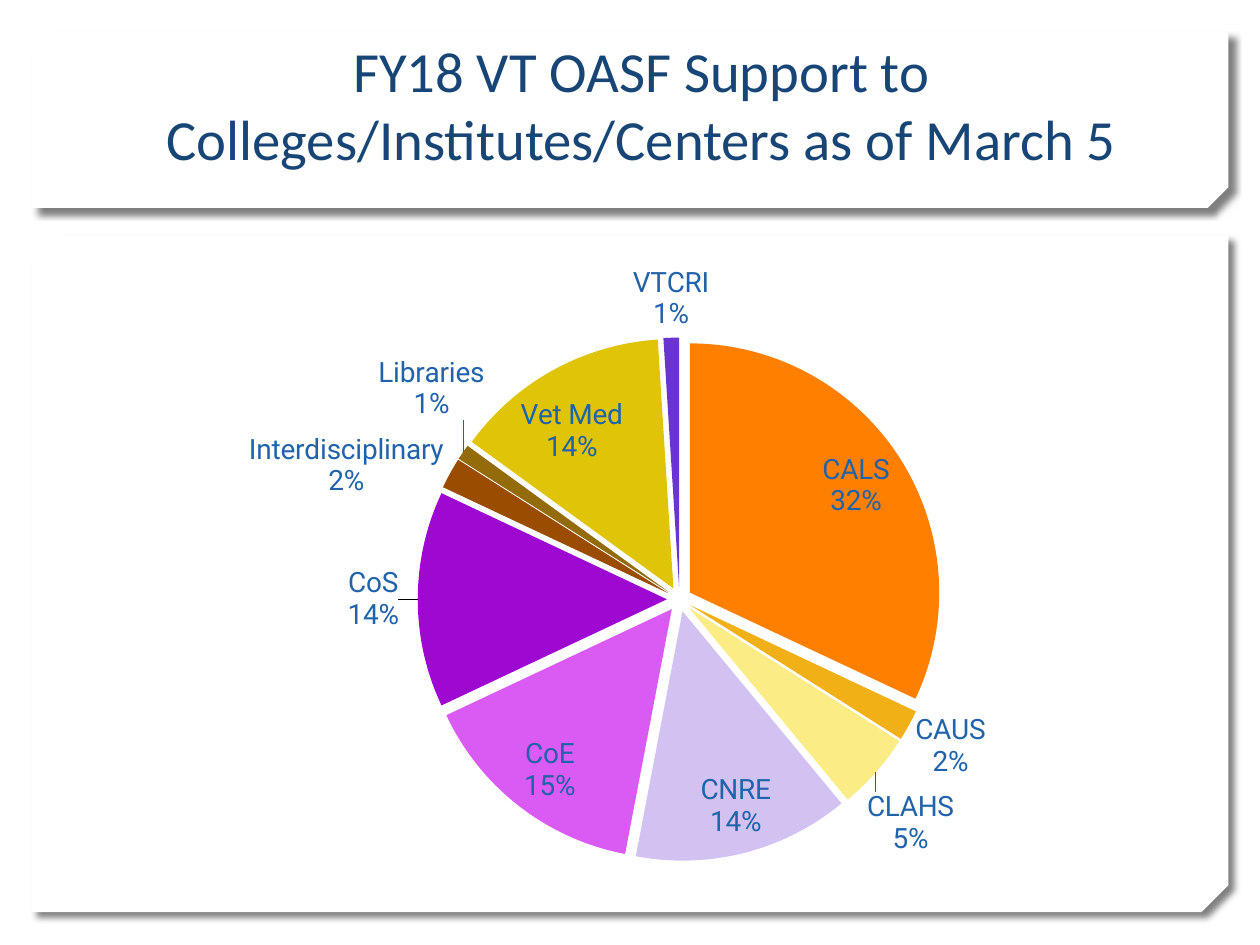
from dataclasses import dataclass

from lxml.etree import SubElement
from pptx import Presentation
from pptx.chart.data import CategoryChartData
from pptx.chart.series import PieSeries
from pptx.dml.color import RGBColor
from pptx.enum.chart import XL_CHART_TYPE as ChartType, XL_LABEL_POSITION as LabelPosition
from pptx.enum.shapes import MSO_SHAPE as Preset
from pptx.enum.text import MSO_ANCHOR as Anchor, PP_ALIGN as Align
from pptx.oxml import parse_xml
from pptx.oxml.ns import nsdecls, qn
from pptx.slide import Slide
from pptx.util import Inches, Pt

WHITE = RGBColor(0xFF, 0xFF, 0xFF)
TITLE_BLUE = RGBColor(0x17, 0x45, 0x76)
LABEL_BLUE = RGBColor(0x20, 0x63, 0xAA)
CHART_NAVY = RGBColor(0x10, 0x31, 0x54)
WIDTH, HEIGHT = Inches(10), Inches(7.5)
MARGIN = 0.25
EXPLOSION = 5
LABEL_SIZE = Pt(16)


@dataclass
class Panel:
    top: float
    height: float
    snip: float


@dataclass
class College:
    name: str
    percent: int
    color: RGBColor


PANELS = [Panel(1.87, 5.37, 0.04), Panel(MARGIN, 1.4, 0.117)]
COLLEGES = [
    College("CALS", 32, RGBColor(0xFF, 0x7F, 0x01)),
    College("CAUS", 2, RGBColor(0xF1, 0xB0, 0x15)),
    College("CLAHS", 5, RGBColor(0xFB, 0xEC, 0x85)),
    College("CNRE", 14, RGBColor(0xD2, 0xC2, 0xF1)),
    College("CoE", 15, RGBColor(0xDA, 0x5A, 0xF4)),
    College("CoS", 14, RGBColor(0x9D, 0x09, 0xD1)),
    College("Interdisciplinary", 2, RGBColor(0x9A, 0x4C, 0x00)),
    College("Libraries", 1, RGBColor(0x94, 0x6B, 0x09)),
    College("Vet Med", 14, RGBColor(0xDF, 0xC4, 0x07)),
    College("VTCRI", 1, RGBColor(0x6A, 0x34, 0xD1)),
]
MOVED_LABEL = [college.name for college in COLLEGES].index("CoS")


def draw_panel(slide: Slide, panel: Panel) -> None:
    card = slide.shapes.add_shape(
        Preset.SNIP_2_DIAG_RECTANGLE, Inches(MARGIN), Inches(panel.top),
        WIDTH - 2 * Inches(MARGIN), Inches(panel.height))
    card.adjustments[0], card.adjustments[1] = 0, panel.snip
    card.fill.solid()
    card.fill.fore_color.rgb = WHITE
    card.line.fill.background()
    properties = card.element.spPr
    properties.find(qn("a:xfrm")).set("flipV", "1")
    properties.append(parse_xml(
        f'<a:effectLst {nsdecls("a")}><a:outerShdw blurRad="{Pt(4)}" dist="{Pt(5)}" '
        f'dir="{45 * 60000}" algn="tl" rotWithShape="0"><a:srgbClr val="000000">'
        '<a:alpha val="50000"/></a:srgbClr></a:outerShdw></a:effectLst>'))


def draw_title(slide: Slide, wording: str) -> None:
    frame = slide.shapes.add_textbox(
        Inches(0.5), Inches(0.16), Inches(9.18), Inches(1.25)).text_frame
    frame.word_wrap = True
    frame.vertical_anchor = Anchor.BOTTOM
    heading = frame.paragraphs[0]
    heading.alignment = Align.CENTER
    run = heading.add_run()
    run.text = wording
    run.font.name = "Calibri"
    run.font.size = Pt(32.4)
    run.font.color.rgb = TITLE_BLUE


def manual_layout(**settings: object):
    entries = "".join(f'<c:{key} val="{value}"/>' for key, value in settings.items())
    return parse_xml(
        f'<c:layout {nsdecls("c")}><c:manualLayout>{entries}</c:manualLayout></c:layout>')


def style_font(font, color: RGBColor, size: int) -> None:
    font.name = "Roboto"
    font.size = size
    font.color.rgb = color


def style_labels(series: PieSeries) -> None:
    labels = series.data_labels
    style_font(labels.font, LABEL_BLUE, LABEL_SIZE)
    labels.show_category_name = True
    labels.show_percentage = True
    labels.show_value = False
    labels.position = LabelPosition.BEST_FIT

    moved = series.points[MOVED_LABEL].data_label
    style_font(moved.font, LABEL_BLUE, LABEL_SIZE)
    moved.position = LabelPosition.OUTSIDE_END
    groups = series._element.find(qn("c:dLbls"))
    label = groups.find(qn("c:dLbl"))
    label.find(qn("c:idx")).addnext(manual_layout(x=-0.01, y=0))
    for flag, shown in (("showVal", 0), ("showCatName", 1), ("showPercent", 1)):
        label.find(qn(f"c:{flag}")).set("val", str(shown))
    for group in (label, groups):
        separator = SubElement(group, qn("c:separator"))
        separator.text = "\n"
        bubble = group.find(qn("c:showBubbleSize"))
        anchor = group.find(qn("c:showPercent")) if bubble is None else bubble
        anchor.addnext(separator)
    leader = groups.find(qn("c:showLeaderLines"))
    if leader is None:
        leader = SubElement(groups, qn("c:showLeaderLines"))
    leader.set("val", "1")


def draw_pie(slide: Slide, colleges: list[College]) -> None:
    support = CategoryChartData()
    support.categories = [college.name for college in colleges]
    support.add_series("Series 1", [college.percent for college in colleges])
    chart = slide.shapes.add_chart(
        ChartType.PIE, Inches(0.26), Inches(1.96), Inches(9.25), Inches(5.54), support).chart
    chart.has_title = False
    chart.has_legend = False
    style_font(chart.font, CHART_NAVY, Pt(12))
    plot = chart.plots[0]
    plot.vary_by_categories = True
    series = plot.series[0]
    for index, college in enumerate(colleges):
        fill = series.points[index].format.fill
        fill.solid()
        fill.fore_color.rgb = college.color
    series.format.line.fill.background()
    explosion = parse_xml(f'<c:explosion {nsdecls("c")} val="{EXPLOSION}"/>')
    series._element.find(qn("c:spPr")).addnext(explosion)
    style_labels(series)

    area = chart._chartSpace.chart.plotArea
    for layout in area.findall(qn("c:layout")):
        area.remove(layout)
    area.insert(0, manual_layout(
        layoutTarget="inner", xMode="edge", yMode="edge", x=0.33, y=0.13, w=0.45, h=0.75))


def main() -> None:
    deck = Presentation()
    deck.slide_width, deck.slide_height = WIDTH, HEIGHT
    slide = deck.slides.add_slide(deck.slide_layouts[6])
    for panel in PANELS:
        draw_panel(slide, panel)
    draw_title(slide, "FY18 VT OASF Support to Colleges/Institutes/Centers as of March 5")
    draw_pie(slide, COLLEGES)
    deck.save("out.pptx")


if __name__ == "__main__":
    main()
